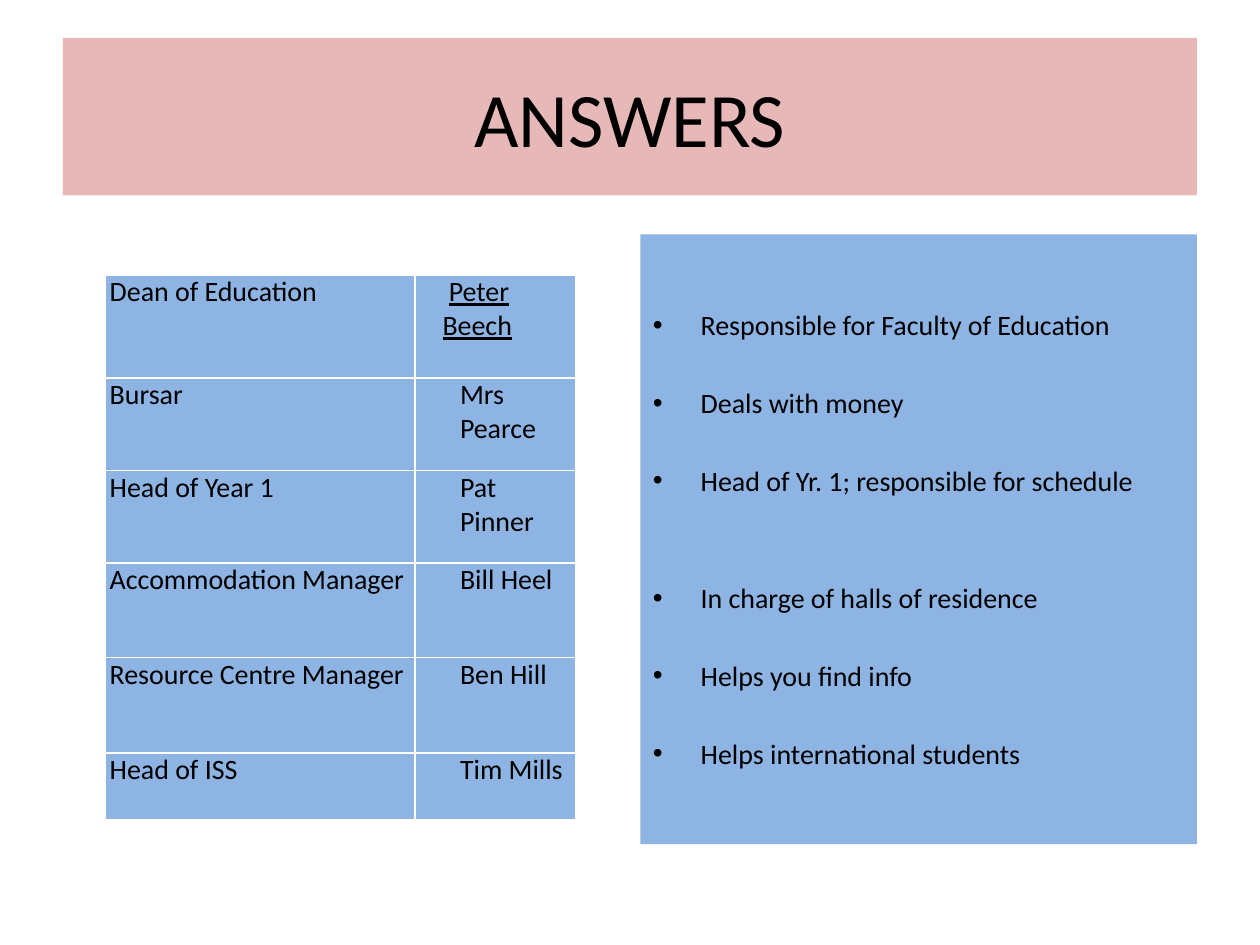
from lxml import etree
from pptx import Presentation
from pptx.dml.color import RGBColor
from pptx.enum.shapes import MSO_SHAPE as Shape
from pptx.enum.text import MSO_ANCHOR as Anchor, PP_ALIGN as Align
from pptx.oxml.ns import qn
from pptx.util import Pt

COLORS = {"title": "E6B9B8", "panel": "8EB4E3", "border": "FFFFFF", "text": "000000"}
FONT = "Calibri"
BODY_SIZE = 16
BULLET_INDENT = 27.36

STAFF = [
    ("Dean of Education", "Peter Beech"),
    ("Bursar", "Mrs Pearce"),
    ("Head of Year 1", "Pat Pinner"),
    ("Accommodation Manager", "Bill Heel"),
    ("Resource Centre Manager", "Ben Hill"),
    ("Head of ISS", "Tim Mills"),
]
COLUMN_WIDTHS = [177, 92]
ROW_HEIGHTS = [59, 53, 52.8, 54, 54.6, 38.2]

# Each duty with the space above it
DUTIES = [
    ("Responsible for Faculty of Education", 0),
    ("Deals with money", 25.2),
    ("Head of Yr. 1; responsible for schedule", 25.2),
    ("In charge of halls of residence", 47.9),
    ("Helps you find info", 25.2),
    ("Helps international students", 25.2),
]


def color(name):
    return RGBColor.from_string(COLORS[name])


def write(paragraph, text, size=BODY_SIZE, align=Align.LEFT, underline=False,
          left=0, first=0, before=0, bullet=None):
    """Fill a paragraph; left is its margin and first the first-line indent."""
    paragraph.alignment = align
    paragraph.space_before = Pt(before)
    properties = paragraph._p.get_or_add_pPr()
    properties.set("marL", str(Pt(left)))
    properties.set("indent", str(Pt(first)))
    if bullet:
        etree.SubElement(properties, qn("a:buFont"), typeface="Arial")
        etree.SubElement(properties, qn("a:buChar"), char=bullet)
    run = paragraph.add_run()
    run.text = text
    run.font.name = FONT
    run.font.size = Pt(size)
    run.font.underline = underline
    run.font.color.rgb = color("text")


class SlideBuilder:
    def __init__(self, slide):
        self.slide = slide

    def panel(self, left, top, width, height, fill, anchor, top_inset=3.6):
        """Add a filled rectangle and return its text frame."""
        shape = self.slide.shapes.add_shape(
            Shape.RECTANGLE, Pt(left), Pt(top), Pt(width), Pt(height))
        shape.shadow.inherit = False
        shape.fill.solid()
        shape.fill.fore_color.rgb = color(fill)
        shape.line.fill.background()
        frame = shape.text_frame
        frame.word_wrap = True
        frame.vertical_anchor = anchor
        frame.margin_top = Pt(top_inset)
        return frame

    def title(self, text):
        frame = self.panel(36, 21.6, 648, 90, "title", Anchor.MIDDLE)
        write(frame.paragraphs[0], text, size=44, align=Align.CENTER)

    def bullets(self, items):
        frame = self.panel(366, 134, 318, 348.4, "panel", Anchor.TOP, top_inset=42)
        for index, (text, before) in enumerate(items):
            paragraph = frame.add_paragraph() if index else frame.paragraphs[0]
            write(paragraph, text, left=BULLET_INDENT, first=-BULLET_INDENT,
                  before=before, bullet="•")

    def style_cell(self, cell):
        properties = cell._tc.get_or_add_tcPr()
        for side in ("lnL", "lnR", "lnT", "lnB"):
            line = etree.SubElement(properties, qn(f"a:{side}"), w=str(Pt(1)))
            fill = etree.SubElement(line, qn("a:solidFill"))
            etree.SubElement(fill, qn("a:srgbClr"), val=COLORS["border"])
        cell.fill.solid()
        cell.fill.fore_color.rgb = color("panel")
        cell.margin_left = cell.margin_right = Pt(0.7)
        cell.margin_top = cell.margin_bottom = Pt(0)

    def staff_table(self, staff):
        table = self.slide.shapes.add_table(
            len(staff), 2, Pt(60), Pt(157), Pt(sum(COLUMN_WIDTHS)),
            Pt(sum(ROW_HEIGHTS))).table
        table.first_row = table.horz_banding = False
        for column, width in zip(table.columns, COLUMN_WIDTHS):
            column.width = Pt(width)
        for index, (row, height, names) in enumerate(zip(table.rows, ROW_HEIGHTS, staff)):
            row.height = Pt(height)
            role, person = row.cells
            self.style_cell(role)
            self.style_cell(person)
            write(role.text_frame.paragraphs[0], names[0], left=2)
            layout = {"left": 25.2} if index else {
                "left": 15.2, "first": 3.6, "underline": True}
            write(person.text_frame.paragraphs[0], names[1], **layout)


def main():
    presentation = Presentation()
    presentation.slide_width = Pt(720)
    presentation.slide_height = Pt(540)
    builder = SlideBuilder(presentation.slides.add_slide(presentation.slide_layouts[6]))
    builder.title("ANSWERS")
    builder.staff_table(STAFF)
    builder.bullets(DUTIES)
    presentation.save("out.pptx")


if __name__ == "__main__":
    main()
